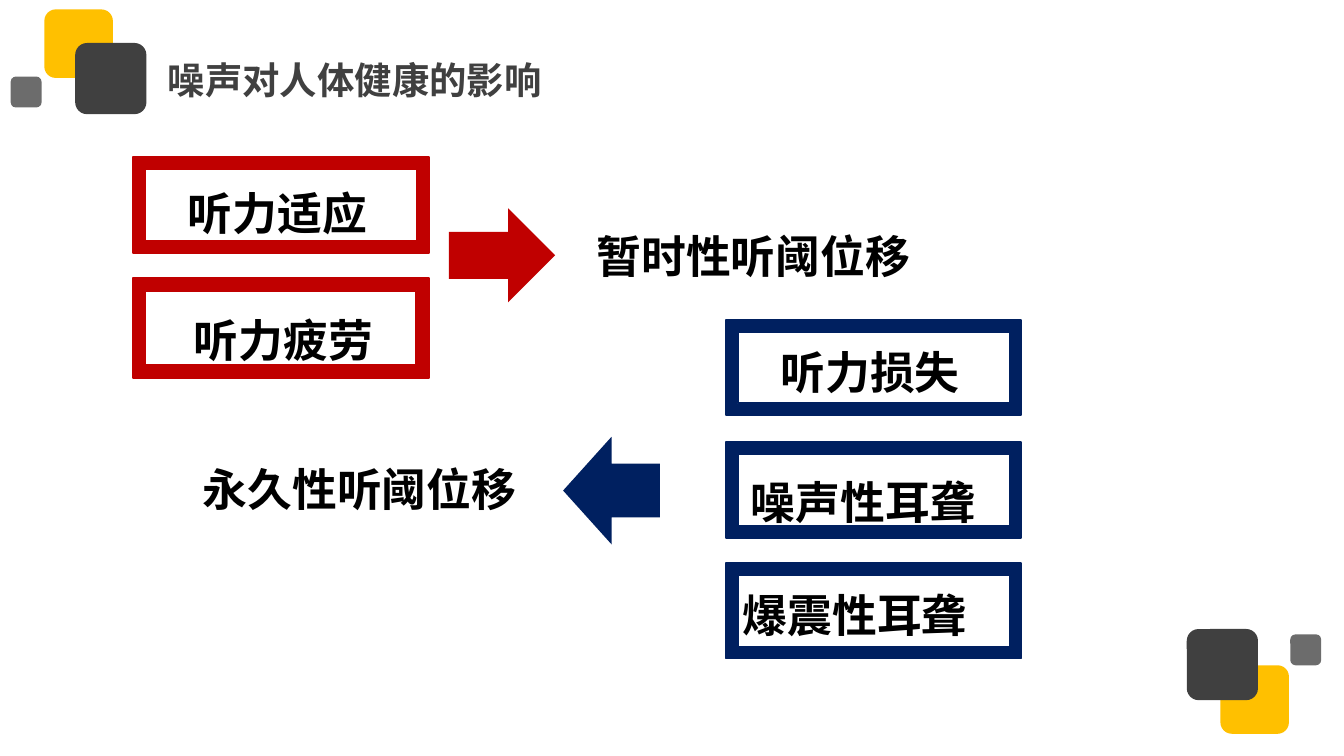
from lxml.etree import SubElement
from pptx import Presentation
from pptx.dml.color import RGBColor
from pptx.enum.shapes import MSO_SHAPE as SHAPE
from pptx.oxml.ns import qn
from pptx.util import Inches, Pt

CJK_FONT = "Noto Sans CJK SC"
GOLD, GRAY, RED, NAVY, BLACK = "FFC000", "404040", "C00000", "002060", "000000"

deck = Presentation()
deck.slide_width, deck.slide_height = Inches(10), Inches(10 * 9 / 16)
slide = deck.slides.add_slide(deck.slide_layouts[6])


def add_block(kind, left, top, width, height, color, outlined=False):
    block = slide.shapes.add_shape(
        kind, Inches(left), Inches(top), Inches(width), Inches(height))
    block.shadow.inherit = False
    block.fill.solid()
    block.fill.fore_color.rgb = RGBColor.from_string(color)
    if outlined:
        block.line.color.rgb = RGBColor.from_string(color)
        block.line.width = Pt(1)
    else:
        block.line.fill.background()
    return block


def add_text(left, top, width, height, runs, color=BLACK, font=CJK_FONT, spacing=None):
    frame = slide.shapes.add_textbox(
        Inches(left), Inches(top), Inches(width), Inches(height)).text_frame
    frame.word_wrap = True
    paragraph = frame.paragraphs[0]
    paragraph.line_spacing = spacing
    for words, size in runs:
        run = paragraph.add_run()
        run.text = words
        run.font.size = Pt(size)
        run.font.bold = True
        run.font.name = font
        run.font.color.rgb = RGBColor.from_string(color)
        SubElement(run.font._element, qn("a:ea"), typeface=CJK_FONT)


corner_squares = [
    (0.33, 0.07, 0.51, GOLD, 0), (0.56, 0.32, 0.53, GRAY, 0), (0.08, 0.57, 0.23, GRAY, 0),
    (9.08, 4.95, 0.51, GOLD, 180), (8.83, 4.68, 0.53, GRAY, 180), (9.6, 4.72, 0.23, GRAY, 180),
]
for left, top, side, color, turn in corner_squares:
    square = add_block(SHAPE.ROUNDED_RECTANGLE, left, top, side, side, color)
    square.rotation = turn
    if side == 0.23:
        tint = square.fill._xPr.find(qn("a:solidFill"))[0]
        SubElement(tint, qn("a:alpha"), val="77000")

add_text(1.15, 0.38, 3.26, 0.44, [("噪声对人体健康的影响", 20)], GRAY)

effects = [
    (0.99, 1.17, 0.71, RED, 1.21, 1.14, 1.78, "听力适应"),
    (0.99, 2.07, 0.74, RED, 1.18, 2.08, 1.91, " 听力疲劳"),
    (5.4, 2.38, 0.71, NAVY, 5.62, 2.32, 1.78, "听力损失"),
    (5.4, 3.29, 0.71, NAVY, 5.4, 3.29, 1.99, "噪声性耳聋"),
    (5.4, 4.19, 0.71, NAVY, 5.34, 4.13, 2.19, "爆震性耳聋"),
]
for left, top, height, color, text_left, text_top, text_width, effect in effects:
    add_block(SHAPE.FRAME, left, top, 2.2, height, color, outlined=True)
    add_text(text_left, text_top, text_width, 0.71, [(" ", 28), (effect, 24)],
             font="Arial", spacing=1.3)

threshold_shifts = [
    (3.34, 1.55, 0.79, 0.7, RED, 0, 4.34, 1.65, "暂时性听阈位移"),
    (4.19, 3.25, 0.72, 0.8, NAVY, 180, 1.41, 3.39, "永久性听阈位移"),
]
for left, top, width, height, color, turn, text_left, text_top, shift in threshold_shifts:
    arrow = add_block(SHAPE.RIGHT_ARROW, left, top, width, height, color)
    arrow.rotation = turn
    add_text(text_left, text_top, 2.74, 0.5, [(shift, 24)])

deck.save("out.pptx")
